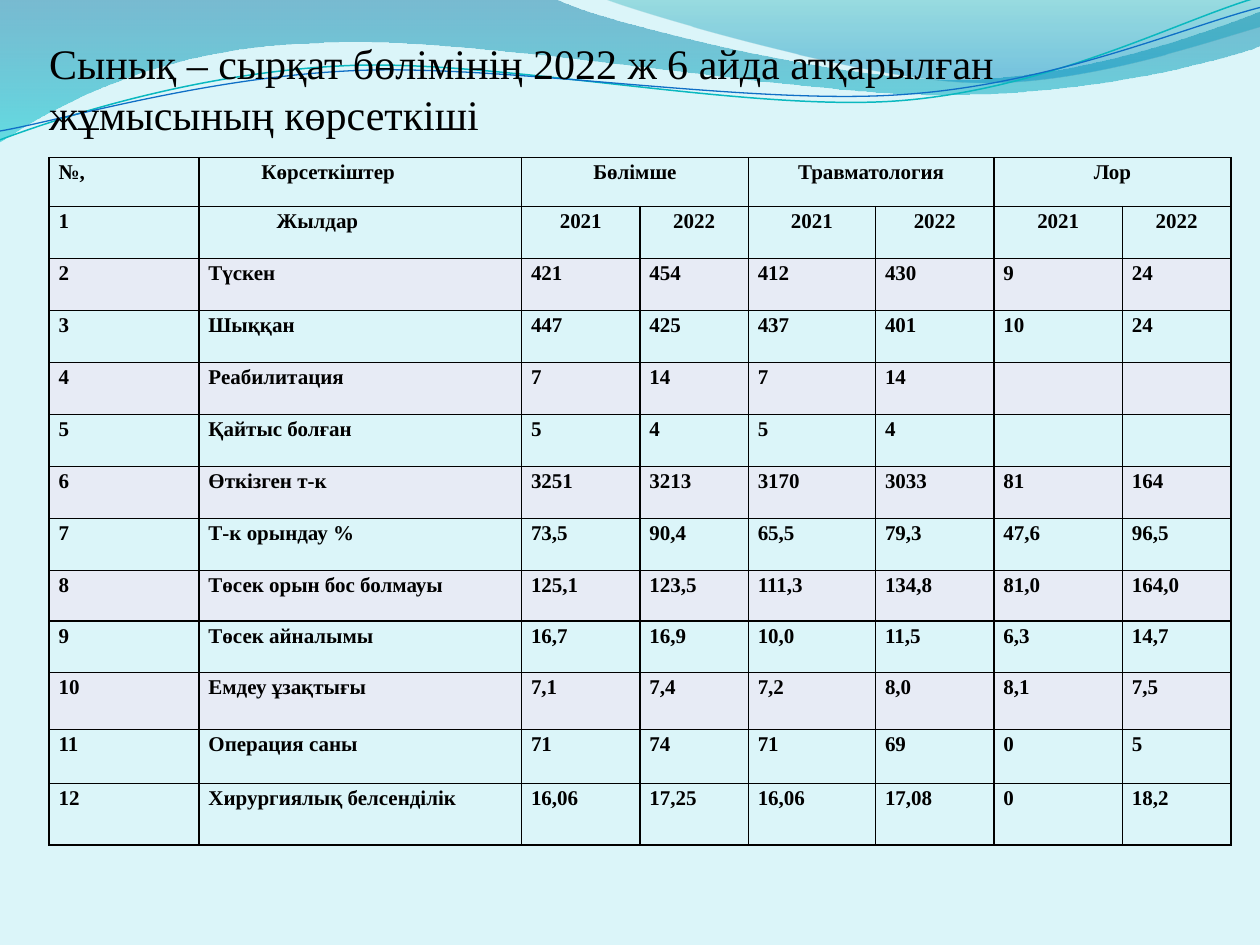
from math import cos, radians, sin

from lxml.etree import SubElement
from pptx import Presentation
from pptx.dml.color import RGBColor
from pptx.enum.text import MSO_ANCHOR, PP_ALIGN
from pptx.oxml import parse_xml
from pptx.oxml.ns import nsdecls, qn
from pptx.util import Inches, Pt

FONT = "Times New Roman"
BACKGROUND, BAND, BLACK = "DBF5F9", "E7EBF5", "000000"
TITLE = "Сынық – сырқат бөлімінің 2022 ж 6 айда атқарылған жұмысының көрсеткіші"

GROUPS = ["№,", "Көрсеткіштер", "Бөлімше", "", "Травматология", "", "Лор", ""]
YEARS = ["1", "Жылдар"] + ["2021", "2022"] * 3
INDICATORS = [
    ("Түскен", "421", "454", "412", "430", "9", "24"),
    ("Шыққан", "447", "425", "437", "401", "10", "24"),
    ("Реабилитация", "7", "14", "7", "14", "", ""),
    ("Қайтыс болған", "5", "4", "5", "4", "", ""),
    ("Өткізген т-к", "3251", "3213", "3170", "3033", "81", "164"),
    ("Т-к орындау %", "73,5", "90,4", "65,5", "79,3", "47,6", "96,5"),
    ("Төсек орын бос болмауы", "125,1", "123,5", "111,3", "134,8", "81,0", "164,0"),
    ("Төсек айналымы", "16,7", "16,9", "10,0", "11,5", "6,3", "14,7"),
    ("Емдеу ұзақтығы", "7,1", "7,4", "7,2", "8,0", "8,1", "7,5"),
    ("Операция саны", "71", "74", "71", "69", "0", "5"),
    ("Хирургиялық белсенділік", "16,06", "17,25", "16,06", "17,08", "0", "18,2"),
]
COLUMN_WIDTHS = [1.19, 2.56, 0.94, 0.86, 1.01, 0.94, 1.02, 0.86]
ROW_HEIGHTS = [0.39] + [2.89 / 7] * 7 + [0.4, 0.41, 0.45, 0.43, 0.49]
BANDED_ROWS = {2, 4, 6, 8, 10}
HEADING_INDENTS = [0.42, 0.54]

# Each path is a start point, then lines (2 numbers) and Bézier curves (6 numbers).
# Gradient stops are position, colour and opacity in percent.
WAVES = [
    ([(-0.01, -0.01), (4.4, -0.01), (4.76, 0.17, 6.64, 0.63, 7.58, 0.63),
      (8.53, 0.63, 9.58, 0.26, 10, 0.09), (10.01, 0.36),
      (9.83, 0.44, 8.7, 0.76, 7.46, 0.75), (6.22, 0.75, 3.82, 0.28, 2.57, 0.34),
      (1.29, 0.36, 0.46, 0.83, -0.01, 1.13)],
     [(0, "0074A1", 45), (100, "00C6CF", 55)]),
    ([(4.79, -0.01), (5.09, 0.11, 6.82, 0.62, 7.69, 0.65),
      (8.56, 0.69, 9.61, 0.32, 10, 0.21), (10, 0)],
     [(0, "00A1A9", 30), (80, "008BBF", 45)]),
]
STRAND_TILT = -2.7
# Path, centre of rotation, colour and line width of each tilted strand.
STRANDS = [
    ([(0, 1.11), (0.48, 0.93, 1.58, 0.57, 2.77, 0.52),
      (3.95, 0.47, 5.93, 0.89, 7.13, 0.8), (8.33, 0.71, 9.38, 0.15, 9.98, -0.02)],
     (4.99, 0.58), "0AB8BF", 0.85),
    ([(0, 1.04), (0.47, 0.96, 1.64, 0.61, 2.83, 0.56),
      (4.03, 0.51, 5.97, 0.84, 7.17, 0.75), (8.36, 0.67, 9.41, 0.21, 10, 0.06)],
     (5, 0.59), "0F6FC6", 0.75),
]


def color(value):
    return RGBColor.from_string(value)


def add_outline(slide, path, close):
    """Build the polygon of all path points, then join each curve's three points."""
    points = [(Inches(x), Inches(y)) for segment in path
              for x, y in zip(segment[::2], segment[1::2])]
    builder = slide.shapes.build_freeform(*points[0])
    builder.add_line_segments(points[1:], close=close)
    outline = builder.convert_to_shape()
    outline.shadow.inherit = False
    lines = iter(list(outline.element.spPr.iter(qn("a:lnTo"))))
    for segment in path[1:]:
        line = next(lines)
        if len(segment) == 6:
            line.tag  # the first control point stays in place
            curve = parse_xml(f'<a:cubicBezTo {nsdecls("a")}/>')
            line.addprevious(curve)
            for part in (line, next(lines), next(lines)):
                curve.append(part[0])
                part.getparent().remove(part)
    return outline


def add_wave(slide, path, stops):
    wave = add_outline(slide, path, True)
    wave.line.fill.background()
    wave.fill.gradient()
    wave.fill.gradient_angle = 270
    for stop, (position, value, _) in zip(wave.fill.gradient_stops, stops):
        stop.position = position / 100
        stop.color.rgb = color(value)
    for srgb, (_, _, opacity) in zip(wave.element.spPr.iter(qn("a:srgbClr")), stops):
        SubElement(srgb, qn("a:alpha")).set("val", str(opacity * 1000))


def level(segment, center):
    """Undo the strand tilt for the points of one segment."""
    angle = radians(-STRAND_TILT)
    leveled = []
    for x, y in zip(segment[::2], segment[1::2]):
        dx, dy = x - center[0], y - center[1]
        leveled += [center[0] + dx * cos(angle) - dy * sin(angle),
                    center[1] + dx * sin(angle) + dy * cos(angle)]
    return leveled


def add_strand(slide, path, center, value, width):
    strand = add_outline(slide, [level(segment, center) for segment in path], False)
    strand.rotation = STRAND_TILT
    strand.fill.background()
    strand.line.color.rgb = color(value)
    strand.line.width = Pt(width)


def style_font(font, size, bold=False):
    font.name, font.size, font.bold = FONT, Pt(size), bold
    font.color.rgb = color(BLACK)


def add_title(slide):
    title = slide.shapes.add_textbox(Inches(0.39), Inches(0.31), Inches(9), Inches(0.79))
    frame = title.text_frame
    frame.word_wrap = True
    frame.vertical_anchor = MSO_ANCHOR.BOTTOM
    frame.margin_left = frame.margin_right = frame.margin_bottom = 0
    frame.margin_top = Inches(0.05)
    frame.text = TITLE
    style_font(frame.paragraphs[0].runs[0].font, 24)


def add_borders(cell):
    properties = cell._tc.get_or_add_tcPr()
    for index, side in enumerate("LRTB"):
        properties.insert(index, parse_xml(
            f'<a:ln{side} {nsdecls("a")} w="12700"><a:solidFill>'
            f'<a:srgbClr val="{BLACK}"/></a:solidFill></a:ln{side}>'))


def fill_cell(cell, text, row, column):
    cell.margin_left = cell.margin_right = Pt(5.4)
    cell.margin_top = cell.margin_bottom = 0
    if row in BANDED_ROWS:
        cell.fill.solid()
        cell.fill.fore_color.rgb = color(BAND)
    else:
        cell.fill.background()
    add_borders(cell)
    if not text:
        return
    paragraph = cell.text_frame.paragraphs[0]
    paragraph.text = text
    paragraph.line_spacing = 1.15
    heading = row < len(HEADING_INDENTS)
    paragraph.alignment = PP_ALIGN.CENTER if heading and column > 1 else PP_ALIGN.LEFT
    if heading and column == 1:
        indent = Inches(HEADING_INDENTS[row])
        paragraph._p.get_or_add_pPr().set("marL", str(indent))
    style_font(paragraph.runs[0].font, 12, True)


def add_indicator_table(slide):
    numbered = [(str(number), *values) for number, values in enumerate(INDICATORS, 2)]
    rows = [GROUPS, YEARS] + numbered
    table = slide.shapes.add_table(
        len(rows), len(COLUMN_WIDTHS), Inches(0.39), Inches(1.25),
        Inches(sum(COLUMN_WIDTHS)), Inches(sum(ROW_HEIGHTS))).table
    table.first_row = table.horz_banding = False
    for column, width in zip(table.columns, COLUMN_WIDTHS):
        column.width = Inches(width)
    for row, height in zip(table.rows, ROW_HEIGHTS):
        row.height = Inches(height)
    for row, values in enumerate(rows):
        for column, text in enumerate(values):
            fill_cell(table.cell(row, column), text, row, column)
    for column in (2, 4, 6):
        table.cell(0, column).merge(table.cell(0, column + 1))


def main():
    presentation = Presentation()
    presentation.slide_width, presentation.slide_height = Inches(10), Inches(7.5)
    slide = presentation.slides.add_slide(presentation.slide_layouts[6])
    slide.background.fill.solid()
    slide.background.fill.fore_color.rgb = color(BACKGROUND)
    for wave in WAVES:
        add_wave(slide, *wave)
    for strand in STRANDS:
        add_strand(slide, *strand)
    add_title(slide)
    add_indicator_table(slide)
    presentation.save("out.pptx")


if __name__ == "__main__":
    main()
